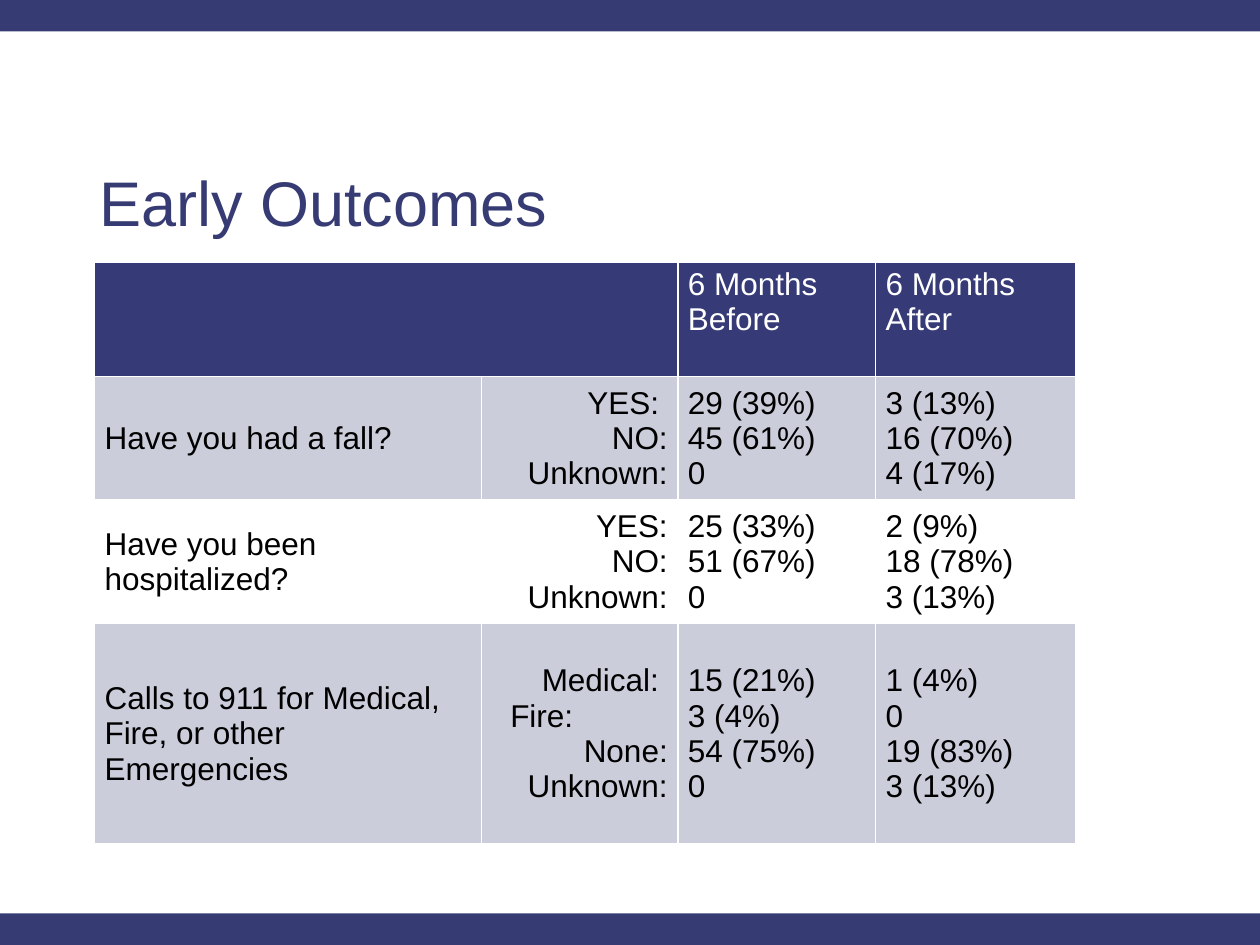
from lxml.etree import SubElement
from pptx import Presentation
from pptx.dml.color import RGBColor
from pptx.enum.shapes import MSO_SHAPE
from pptx.enum.text import MSO_ANCHOR, PP_ALIGN
from pptx.oxml import parse_xml
from pptx.oxml.ns import nsdecls, qn
from pptx.util import Inches, Pt

NAVY, HEADER, WHITE, BLACK = "363B73", "363B77", "FFFFFF", "000000"
FONT = "Arial"
WIDTH, HEIGHT, BAND = 10, 7.5, 0.25
TITLE = "Early Outcomes"
COLUMNS = (3.07, 1.56, 1.57, 1.59)
ROW_HEIGHTS = (0.91, 0.91, 0.92, 1.75)
LABELS = 1
ROWS = [
    ([], [], ["6 Months Before"], ["6 Months After"]),
    (["Have you had a fall?"], ["YES: ", "NO:", "Unknown:"],
     ["29 (39%)", "45 (61%)", "0"], ["3 (13%)", "16 (70%)", "4 (17%)"]),
    (["Have you been hospitalized?"], ["YES:", "NO:", "Unknown:"],
     ["25 (33%)", "51 (67%)", "0"], ["2 (9%)", "18 (78%)", "3 (13%)"]),
    (["Calls to 911 for Medical, Fire, or other Emergencies"],
     ["Medical: ", "Fire:", "None:", "Unknown:"],
     ["15 (21%)", "3 (4%)", "54 (75%)", "0"], ["1 (4%)", "0", "19 (83%)", "3 (13%)"]),
]


def color(value):
    return RGBColor.from_string(value)


def style(paragraph, size, value):
    font = paragraph.font
    for target in [font] + [run.font for run in paragraph.runs]:
        target.size, target.name, target.bold = Pt(size), FONT, False
        target.color.rgb = color(value)


def add_borders(cell):
    properties = cell._tc.get_or_add_tcPr()
    for position, side in enumerate("LRTB"):
        properties.insert(position, parse_xml(
            f'<a:ln{side} {nsdecls("a")} w="{Pt(1)}"><a:solidFill>'
            f'<a:srgbClr val="{WHITE}"/></a:solidFill></a:ln{side}>'))


def fill_cell(cell, row):
    if row == 2:
        cell.fill.background()
        return
    cell.fill.solid()
    cell.fill.fore_color.rgb = color(NAVY if row else HEADER)
    if row:
        swatch = cell._tc.tcPr.find(f"{qn('a:solidFill')}/{qn('a:srgbClr')}")
        SubElement(swatch, qn("a:alpha"), val="25000")


def write_cell(cell, lines, row, column):
    cell.margin_left = cell.margin_right = Inches(0.08)
    cell.margin_top = cell.margin_bottom = Inches(0.04)
    cell.vertical_anchor = MSO_ANCHOR.MIDDLE if row else MSO_ANCHOR.TOP
    cell.text_frame.text = "\n".join(lines)
    for paragraph in cell.text_frame.paragraphs:
        if paragraph.text == "Fire:":
            paragraph._p.get_or_add_pPr().set("marL", str(Inches(0.15)))
        elif column == LABELS:
            paragraph.alignment = PP_ALIGN.RIGHT
        style(paragraph, 18, BLACK if row else WHITE)


def add_outcomes(slide):
    table = slide.shapes.add_table(
        len(ROWS), len(COLUMNS), Inches(0.75), Inches(2.08),
        Inches(sum(COLUMNS)), Inches(sum(ROW_HEIGHTS))).table
    table.horz_banding = False
    for column, width in zip(table.columns, COLUMNS):
        column.width = Inches(width)
    for row, (contents, height) in enumerate(zip(ROWS, ROW_HEIGHTS)):
        table.rows[row].height = Inches(height)
        for column, lines in enumerate(contents):
            cell = table.cell(row, column)
            write_cell(cell, lines, row, column)
            fill_cell(cell, row)
            add_borders(cell)
    table.cell(0, 0).merge(table.cell(0, LABELS))


def main():
    """Build the early outcomes slide with its before and after table."""
    presentation = Presentation()
    presentation.slide_width, presentation.slide_height = Inches(WIDTH), Inches(HEIGHT)
    slide = presentation.slides.add_slide(presentation.slide_layouts[6])
    slide.background.fill.solid()
    slide.background.fill.fore_color.rgb = color(NAVY)

    panel = slide.shapes.add_shape(
        MSO_SHAPE.RECTANGLE, 0, Inches(BAND), Inches(WIDTH), Inches(HEIGHT - 2 * BAND))
    panel.shadow.inherit = False
    panel.fill.solid()
    panel.fill.fore_color.rgb = color(WHITE)
    panel.line.fill.background()

    title = slide.shapes.add_textbox(Inches(0.69), Inches(1.24), Inches(8.62), Inches(0.72))
    frame = title.text_frame
    frame.word_wrap = True
    frame.vertical_anchor = MSO_ANCHOR.MIDDLE
    frame.text = TITLE
    style(frame.paragraphs[0], 36, NAVY)

    add_outcomes(slide)
    presentation.save("out.pptx")


if __name__ == "__main__":
    main()
